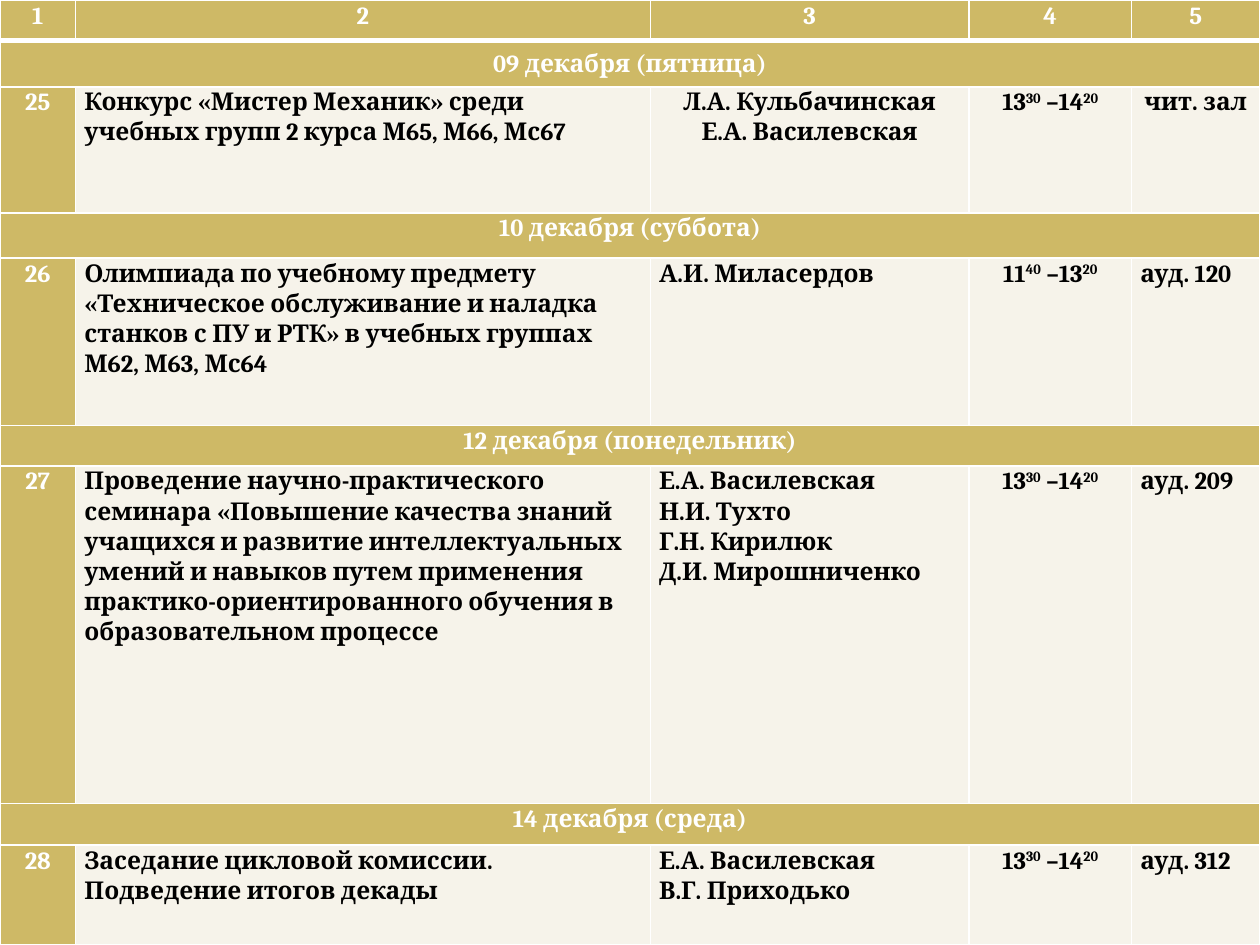
from lxml.etree import SubElement as Sub
from pptx import Presentation
from pptx.dml.color import RGBColor
from pptx.enum.text import MSO_ANCHOR as Anchor, PP_ALIGN as Align
from pptx.oxml.ns import qn
from pptx.util import Pt

GOLD, CREAM, WHITE, BLACK = "CEB966", "F6F3EA", "FFFFFF", "000000"
COLS = [43.2, 328.4, 182.1, 92.9, 73.4]
ROWS = [23, 26.6, 72, 25.9, 95.7, 23.1, 193, 23.8, 56.9]
NOON = ("13", "30", " –14", "20")
DAYS = [
    ("09 декабря (пятница)", "25",
     "Конкурс «Мистер Механик» среди учебных групп 2 курса М65, М66, Мс67",
     ["Л.А. Кульбачинская", "Е.А. Василевская"], NOON, "чит. зал"),
    ("10 декабря (суббота)", "26",
     "Олимпиада по учебному предмету «Техническое обслуживание и наладка "
     "станков с ПУ и РТК» в учебных группах М62, М63, Мс64",
     ["А.И. Миласердов"], ("11", "40", " –13", "20"), "ауд. 120"),
    ("12 декабря (понедельник)", "27",
     "Проведение научно-практического семинара «Повышение качества знаний "
     "учащихся и развитие интеллектуальных умений и навыков путем применения "
     "практико-ориентированного обучения в образовательном процессе",
     ["Е.А. Василевская", "Н.И. Тухто", "Г.Н. Кирилюк", "Д.И. Мирошниченко"],
     NOON, "ауд. 209"),
    ("14 декабря (среда)", "28",
     "Заседание цикловой комиссии. Подведение итогов декады",
     ["Е.А. Василевская", "В.Г. Приходько"], NOON, "ауд. 312"),
]


def paint(fmt, color):
    """Give a fill a solid colour."""
    fmt.solid()
    fmt.fore_color.rgb = RGBColor.from_string(color)


def edge(cell, top, bottom):
    """Draw white borders round a cell."""
    props = cell._tc.get_or_add_tcPr()
    for side, width in (("L", 1), ("R", 1), ("T", top), ("B", bottom)):
        line = Sub(props, qn(f"a:ln{side}"), w=str(Pt(width)))
        Sub(Sub(line, qn("a:solidFill")), qn("a:srgbClr"), val=WHITE)


def write(cell, lines, color, align):
    """Write lines, each a tuple of runs with every second one raised."""
    frame = cell.text_frame
    for i, line in enumerate(lines):
        para = frame.add_paragraph() if i else frame.paragraphs[0]
        para.alignment, para.line_spacing = align, 1.07
        font = para.font
        font.name, font.size, font.bold = "Cambria", Pt(14), True
        font.color.rgb = RGBColor.from_string(color)
        for j, text in enumerate(line):
            run = para.add_run()
            run.text = text
            if j % 2:
                run._r.get_or_add_rPr().set("baseline", "30000")


def fill_row(table, r, items, fill, color, aligns):
    """Fill one table row, with its first cell always gold."""
    for c, (lines, align) in enumerate(zip(items, aligns)):
        cell = table.cell(r, c)
        cell.margin_left = cell.margin_right = Pt(5)
        cell.margin_top = cell.margin_bottom = 0
        edge(cell, 3 if r == 1 else 1, 3 if r == 0 else 1)
        paint(cell.fill, fill if c else GOLD)
        write(cell, lines, color if c else WHITE, align)


def add_plan(slide, left, top, width, height):
    """Place the timetable in the given box."""
    table = slide.shapes.add_table(
        len(ROWS), len(COLS), Pt(left), Pt(top), Pt(width), Pt(height)).table
    for col, size in zip(table.columns, COLS):
        col.width = Pt(size * width / sum(COLS))
    for row, size in zip(table.rows, ROWS):
        row.height = Pt(size * height / sum(ROWS))
    mid = [Align.CENTER] * len(COLS)
    fill_row(table, 0, [[(n,)] for n in "12345"], GOLD, WHITE, mid)
    for i, (day, num, event, names, time, room) in enumerate(DAYS):
        r = 2 * i + 1
        fill_row(table, r, [[(day,)]] + [[()]] * 4, GOLD, WHITE, mid)
        table.cell(r, 0).merge(table.cell(r, len(COLS) - 1))
        side = Align.LEFT if i else Align.CENTER
        items = [[(num,)], [(event,)], [(n,) for n in names], [time], [(room,)]]
        fill_row(table, r + 1, items, CREAM, BLACK,
                 [Align.CENTER, Align.LEFT, side, Align.CENTER, side])
    table.cell(1, 0).vertical_anchor = Anchor.MIDDLE


def main():
    """Build and save the slide."""
    deck = Presentation()
    deck.slide_width, deck.slide_height = Pt(720), Pt(540)
    slide = deck.slides.add_slide(deck.slide_layouts[6])
    paint(slide.background.fill, BLACK)
    add_plan(slide, 0, 0, 720, 540)
    deck.save("out.pptx")


if __name__ == "__main__":
    main()
